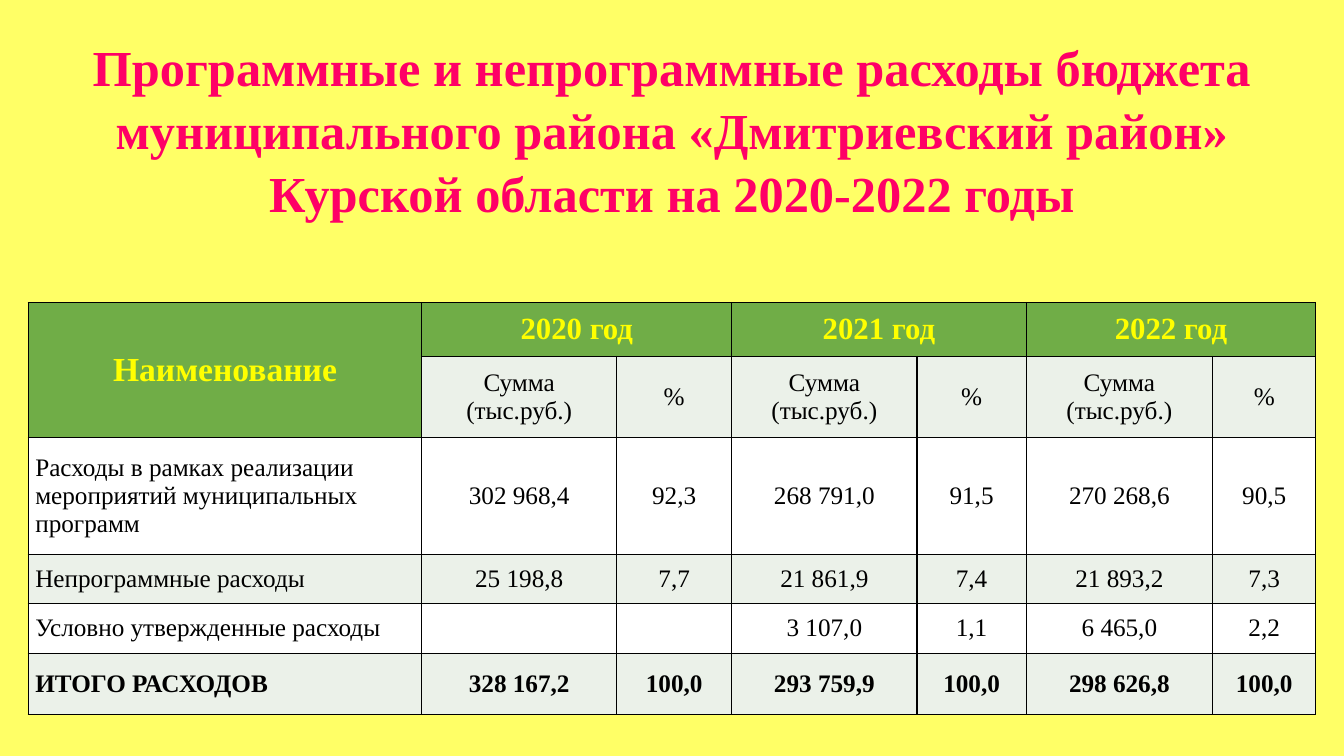
import pptx
import pptx.util
import pptx.dml.color
import pptx.enum.text
import pptx.oxml
import pptx.oxml.ns

Cm, Pt = pptx.util.Cm, pptx.util.Pt
RGBColor = pptx.dml.color.RGBColor
ALIGN = pptx.enum.text.PP_ALIGN
MIDDLE = pptx.enum.text.MSO_ANCHOR.MIDDLE

# Content
TITLE = ("Программные и непрограммные расходы бюджета "
         "муниципального района «Дмитриевский район»\v"
         "Курской области на 2020-2022 годы")
YEARS = ["2020 год", "2021 год", "2022 год"]
ROWS = [
    ["Наименование"] + [text for year in YEARS for text in (year, "")],
    [""] + ["Сумма (тыс.руб.)", "%"] * len(YEARS),
    ["Расходы в рамках реализации мероприятий муниципальных программ",
     "302 968,4", "92,3", "268 791,0", "91,5", "270 268,6", "90,5"],
    ["Непрограммные расходы",
     "25 198,8", "7,7", "21 861,9", "7,4", "21 893,2", "7,3"],
    ["Условно утвержденные расходы",
     "", "", "3 107,0", "1,1", "6 465,0", "2,2"],
    ["ИТОГО РАСХОДОВ",
     "328 167,2", "100,0", "293 759,9", "100,0", "298 626,8", "100,0"],
]

# Sizes in centimetres
PAGE_WIDTH, PAGE_HEIGHT, TITLE_HEIGHT = 33.87, 19.05, 6.45
TABLE_LEFT, TABLE_TOP = 0.71, 7.62
COLUMN_WIDTHS = [9.92, 4.91, 2.9, 4.67, 2.75, 4.7, 2.6]
ROW_HEIGHTS = [1.36, 2.05, 2.95, 1.23, 1.25, 1.54]

# Colours and formats
YELLOW_PAGE = RGBColor(0xFF, 0xFF, 0x66)
PINK = RGBColor(0xFF, 0x00, 0x66)
YELLOW = RGBColor(0xFF, 0xFF, 0x00)
GREEN = RGBColor(0x70, 0xAD, 0x47)
PALE = RGBColor(0xEB, 0xF1, 0xE9)
WHITE = RGBColor(0xFF, 0xFF, 0xFF)
BLACK = RGBColor(0x00, 0x00, 0x00)
FONT = "Times New Roman"
TITLE_FORMAT = {"name": FONT, "size": Pt(36), "bold": True, "color": PINK}
NAME_FORMAT = {"name": FONT, "size": Pt(24), "bold": True, "color": YELLOW}
YEAR_FORMAT = {**NAME_FORMAT, "size": Pt(22)}
BODY_FORMAT = {"name": FONT, "size": Pt(18), "bold": False, "color": BLACK}
TOTAL_FORMAT = {**BODY_FORMAT, "bold": True}
BODY_MARGINS = {"margin_left": Cm(0.18), "margin_right": Cm(0.18),
                "margin_top": 0, "margin_bottom": 0}


def write(frame, text, formats, align):
    para = frame.paragraphs[0]
    para.text = text
    para.alignment = align
    # The paragraph font keeps empty cells at the same size
    for font in [para.font] + [span.font for span in para.runs]:
        for name, value in formats.items():
            if name == "color":
                font.color.rgb = value
            else:
                setattr(font, name, value)
    return para


def add_borders(cell):
    properties = cell._tc.get_or_add_tcPr()
    for place, side in enumerate(("lnL", "lnR", "lnT", "lnB")):
        properties.insert(place, pptx.oxml.parse_xml(
            f'<a:{side} {pptx.oxml.ns.nsdecls("a")} w="{Pt(1)}">'
            f'<a:solidFill><a:srgbClr val="{BLACK}"/></a:solidFill></a:{side}>'))


def cell_format(row, column):
    if row == 0 or (row == 1 and column == 0):
        return (YEAR_FORMAT if column else NAME_FORMAT), GREEN
    formats = TOTAL_FORMAT if row == len(ROWS) - 1 else BODY_FORMAT
    return formats, (PALE if row % 2 else WHITE)


# Page
deck = pptx.Presentation()
deck.slide_width, deck.slide_height = Cm(PAGE_WIDTH), Cm(PAGE_HEIGHT)
page = deck.slides.add_slide(deck.slide_layouts[6])
page.background.fill.solid()
page.background.fill.fore_color.rgb = YELLOW_PAGE

# Title
box = page.shapes.add_textbox(0, 0, Cm(PAGE_WIDTH), Cm(TITLE_HEIGHT))
box.text_frame.word_wrap = True
box.text_frame.vertical_anchor = MIDDLE
title = write(box.text_frame, TITLE, TITLE_FORMAT, ALIGN.CENTER)
title.line_spacing = 1.04

# Table
table = page.shapes.add_table(
    len(ROWS), len(COLUMN_WIDTHS), Cm(TABLE_LEFT), Cm(TABLE_TOP),
    Cm(sum(COLUMN_WIDTHS)), Cm(sum(ROW_HEIGHTS))).table
table.first_row = table.horz_banding = False
for column, width in zip(table.columns, COLUMN_WIDTHS):
    column.width = Cm(width)
for row, height in zip(table.rows, ROW_HEIGHTS):
    row.height = Cm(height)

for r, texts in enumerate(ROWS):
    for c, text in enumerate(texts):
        cell = table.cell(r, c)
        formats, fill = cell_format(r, c)
        cell.fill.solid()
        cell.fill.fore_color.rgb = fill
        cell.vertical_anchor = MIDDLE
        if r > 1:
            for name, value in BODY_MARGINS.items():
                setattr(cell, name, value)
        align = ALIGN.LEFT if r > 1 and c == 0 else ALIGN.CENTER
        write(cell.text_frame, text, formats, align)
        add_borders(cell)

# Heading cells that span rows or columns
table.cell(0, 0).merge(table.cell(1, 0))
for c in range(1, len(COLUMN_WIDTHS), 2):
    table.cell(0, c).merge(table.cell(0, c + 1))

deck.save("out.pptx")
